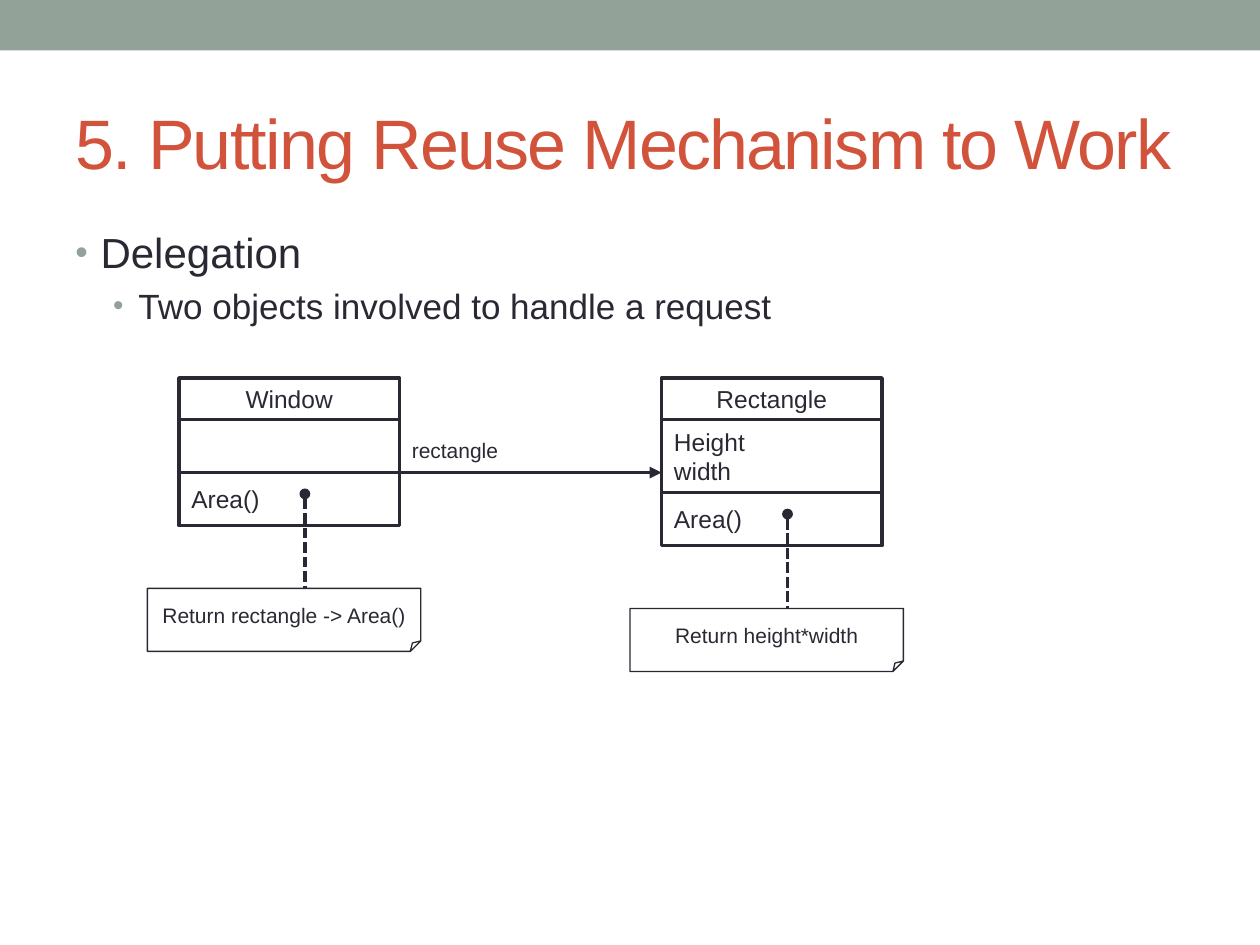
"""Build the slide that explains delegation with two linked classes."""
from dataclasses import dataclass

from lxml import etree
from pptx import Presentation
from pptx.dml.color import RGBColor
from pptx.enum.dml import MSO_LINE
from pptx.enum.shapes import MSO_CONNECTOR, MSO_SHAPE
from pptx.enum.text import MSO_ANCHOR, PP_ALIGN
from pptx.oxml.ns import qn
from pptx.util import Inches, Pt

RECTANGLE, NOTE = MSO_SHAPE.RECTANGLE, MSO_SHAPE.FOLDED_CORNER
STRAIGHT, DASHED = MSO_CONNECTOR.STRAIGHT, MSO_LINE.SQUARE_DOT
LEFT, CENTER = PP_ALIGN.LEFT, PP_ALIGN.CENTER
MIDDLE = MSO_ANCHOR.MIDDLE


@dataclass(frozen=True)
class Theme:
    """Colours, font, type sizes and line widths of the slide."""
    ink: RGBColor = RGBColor(0x29, 0x29, 0x34)
    accent: RGBColor = RGBColor(0xD2, 0x53, 0x3C)
    band: RGBColor = RGBColor(0x93, 0xA2, 0x99)
    paper: RGBColor = RGBColor(0xFF, 0xFF, 0xFF)
    font: str = "Arial"
    title: int = 40
    bullets: tuple = (24, 20)
    member: int = 14
    label: int = 12
    box_line: float = 2.08
    link_line: float = 2.25
    note_line: float = 0.75


THEME = Theme()


def style_paragraph(paragraph, size, color=THEME.ink, align=LEFT):
    """Set the font and alignment of a paragraph."""
    paragraph.alignment = align
    paragraph.font.name = THEME.font
    paragraph.font.size = Pt(size)
    paragraph.font.color.rgb = color


def write_lines(frame, lines, size, align=LEFT):
    """Fill a text frame with one paragraph per line."""
    frame.text = "\n".join(lines)
    for paragraph in frame.paragraphs:
        style_paragraph(paragraph, size, align=align)


def add_box(slide, kind, left, top, width, height, fill=None, line_width=None):
    """Add a flat shape with an optional fill and outline."""
    box = slide.shapes.add_shape(
        kind, Inches(left), Inches(top), Inches(width), Inches(height))
    box.shadow.inherit = False
    if fill is None:
        box.fill.background()
    else:
        box.fill.solid()
        box.fill.fore_color.rgb = fill
    if line_width is None:
        box.line.fill.background()
    else:
        box.line.color.rgb = THEME.ink
        box.line.width = Pt(line_width)
    box.text_frame.word_wrap = True
    box.text_frame.vertical_anchor = MIDDLE
    return box


def add_link(slide, start, end, width, end_tag, end_type, dash=None):
    """Add a straight line with a decorated end."""
    link = slide.shapes.add_connector(
        STRAIGHT, *(Inches(value) for value in (*start, *end)))
    link.line.color.rgb = THEME.ink
    link.line.width = Pt(width)
    if dash is not None:
        link.line.dash_style = dash
    etree.SubElement(link.line._get_or_add_ln(), qn(end_tag), type=end_type)
    etree.SubElement(link._element.spPr, qn("a:effectLst"))


def add_title(slide, text):
    """Place and format the title placeholder."""
    title = slide.shapes.title
    title.left, title.top = Inches(0.5), Inches(0.58)
    title.width, title.height = Inches(9), Inches(1.08)
    title.text_frame.text = text
    title.text_frame.vertical_anchor = MIDDLE
    paragraph = title.text_frame.paragraphs[0]
    style_paragraph(paragraph, THEME.title, THEME.accent)
    paragraph.runs[0].font._element.set("spc", "-100")


def add_bullets(slide, lines):
    """Add a bulleted list whose lines each go one level deeper."""
    body = slide.shapes.add_textbox(
        Inches(0.5), Inches(1.75), Inches(9), Inches(5.33))
    frame = body.text_frame
    frame.word_wrap = True
    write_lines(frame, lines, THEME.bullets[0])
    for level, paragraph in enumerate(frame.paragraphs):
        size = THEME.bullets[level]
        paragraph.level = level
        paragraph.font.size = Pt(size)
        paragraph.space_before = Pt(size * 0.2)
        properties = paragraph._p.get_or_add_pPr()
        properties.set("marL", str(Inches(0.2 + 0.3 * level)))
        properties.set("indent", str(Inches(-0.2)))
        bullet_parts = [
            etree.Element(qn("a:buClr")),
            etree.Element(qn("a:buSzPct"), val="85000"),
            etree.Element(qn("a:buFont"), typeface=THEME.font),
            etree.Element(qn("a:buChar"), char="•"),
        ]
        etree.SubElement(
            bullet_parts[0], qn("a:srgbClr"), val=str(THEME.band))
        run_defaults = properties.find(qn("a:defRPr"))
        for part in bullet_parts:
            run_defaults.addprevious(part)


def add_class(slide, left, name, attributes, attribute_height, method, note):
    """Add a class box with a note hanging from its method."""
    width, top = 1.75, 3
    compartments = [
        ([name], 0.33, CENTER),
        (attributes, attribute_height, LEFT),
        ([method], 0.42, LEFT),
    ]
    for lines, height, align in compartments:
        box = add_box(slide, RECTANGLE, left, top, width, height,
                      THEME.paper, THEME.box_line)
        write_lines(box.text_frame, lines, THEME.member, align)
        top += height
    note_top, stem_x = top + 0.5, left + 1
    note_box = add_box(slide, NOTE, left - 0.25, note_top, 2.17, 0.5,
                       line_width=THEME.note_line)
    write_lines(note_box.text_frame, [note], THEME.label, CENTER)
    add_link(slide, (stem_x, top - 0.25), (stem_x, note_top),
             THEME.box_line, "a:headEnd", "oval", DASHED)


def add_reference(slide, start, end, text):
    """Add an arrow between the classes with its label above."""
    add_link(slide, start, end, THEME.link_line, "a:tailEnd", "triangle")
    label = slide.shapes.add_textbox(
        Inches(start[0]), Inches(start[1] - 0.33), Inches(0.89), Inches(0.3))
    label.text_frame.word_wrap = False
    write_lines(label.text_frame, [text], THEME.label)


def main():
    """Build and save the slide."""
    deck = Presentation()
    deck.slide_width, deck.slide_height = Inches(10), Inches(7.5)
    slide = deck.slides.add_slide(deck.slide_layouts[5])
    add_box(slide, RECTANGLE, 0, 0, 10, 0.4, THEME.band)
    add_title(slide, "5. Putting Reuse Mechanism to Work")
    add_bullets(slide, ["Delegation",
                        "Two objects involved to handle a request"])
    add_class(slide, 5.25, "Rectangle", ["Height", "width"], 0.58,
              "Area()", "Return height*width")
    add_class(slide, 1.42, "Window", [], 0.42,
              "Area()", "Return rectangle -> Area()")
    add_reference(slide, (3.17, 3.75), (5.25, 3.75), "rectangle")
    deck.save("out.pptx")


if __name__ == "__main__":
    main()
